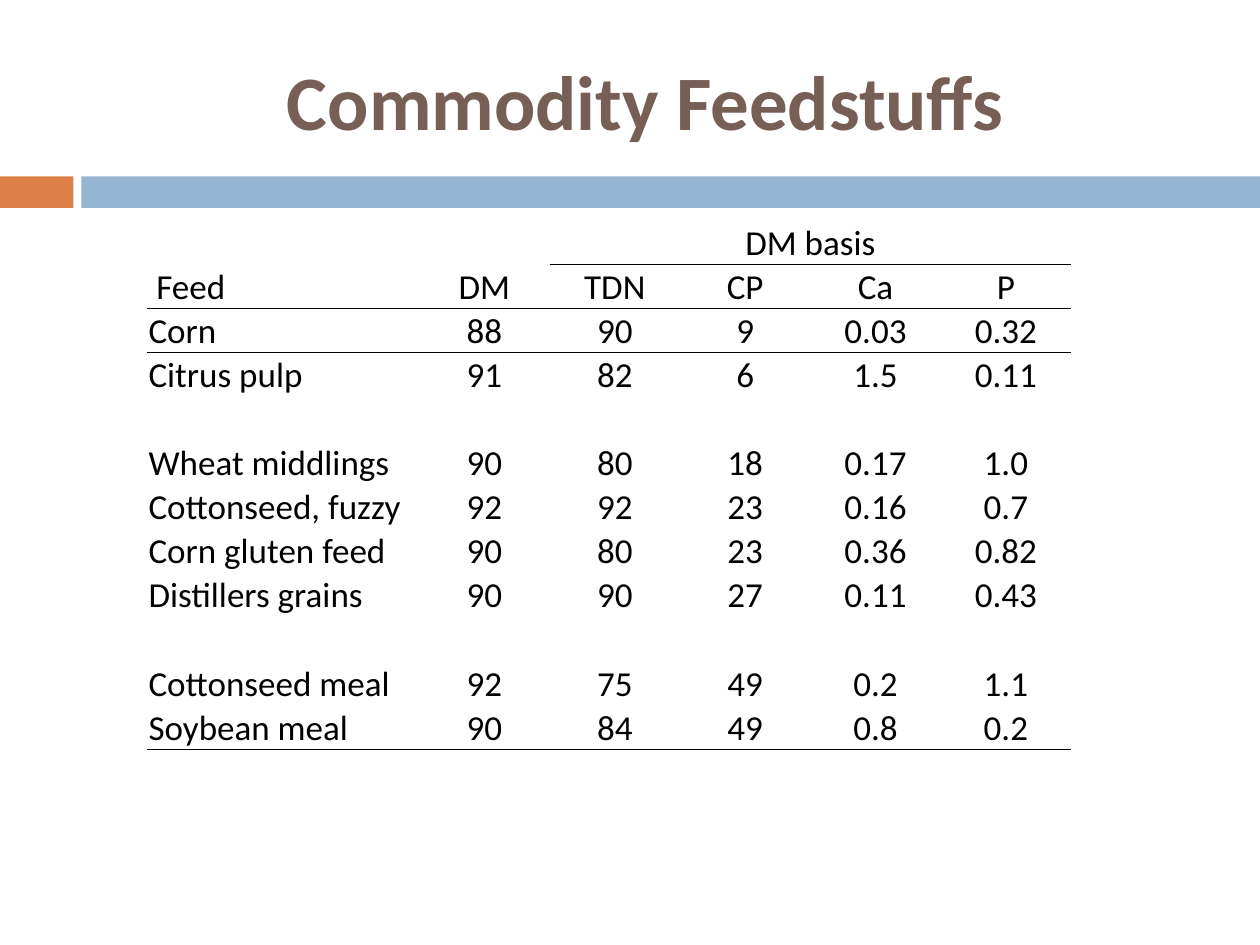
from lxml import etree
from pptx import Presentation
from pptx import util as u
from pptx.dml.color import RGBColor
from pptx.enum import shapes, text
from pptx.oxml import ns

COLORS = {"orange": "DD8047", "blue": "94B6D2", "brown": "775F55", "black": "000000"}
FEEDS = [
    ["", "", "DM basis", "", "", ""],
    ["Feed", "DM", "TDN", "CP", "Ca", "P"],
    ["Corn", "88", "90", "9", "0.03", "0.32"],
    ["Citrus pulp", "91", "82", "6", "1.5", "0.11"],
    [""] * 6,
    ["Wheat middlings", "90", "80", "18", "0.17", "1.0"],
    ["Cottonseed, fuzzy", "92", "92", "23", "0.16", "0.7"],
    ["Corn gluten feed", "90", "80", "23", "0.36", "0.82"],
    ["Distillers grains", "90", "90", "27", "0.11", "0.43"],
    [""] * 6,
    ["Cottonseed meal", "92", "75", "49", "0.2", "1.1"],
    ["Soybean meal", "90", "84", "49", "0.8", "0.2"],
]
ROW_HEIGHT = 25.2
COLUMN_WIDTHS = [155.4] + [74.5] * 5
RULES_BELOW = {0: 2, 1: 0, len(FEEDS) - 1: 0}
NO_GRID_STYLE = "{2D5ABB26-0587-4C30-8999-92F81FD0307C}"


def write(para, words, align, color, **font):
    para.alignment = align
    span = para.add_run()
    span.text = words
    span.font.color.rgb = RGBColor.from_string(COLORS[color])
    for name, value in {"name": "Calibri", **font}.items():
        setattr(span.font, name, value)


def add_border(cell, side):
    props = cell._tc.get_or_add_tcPr()
    line = etree.Element(ns.qn(f"a:{side}"), w=str(u.Pt(0.5)))
    fill = etree.SubElement(line, ns.qn("a:solidFill"))
    etree.SubElement(fill, ns.qn("a:srgbClr"), val=COLORS["black"])
    props.insert(0, line)


deck = Presentation()
deck.slide_width, deck.slide_height = u.Pt(720), u.Pt(540)
page = deck.slides.add_slide(deck.slide_layouts[6])

for left, width, color in [(0, 42, "orange"), (46.5, 673.5, "blue")]:
    bar = page.shapes.add_shape(
        shapes.MSO_SHAPE.RECTANGLE, u.Pt(left), u.Pt(100.8), u.Pt(width), u.Pt(18)
    )
    bar.shadow.inherit = False
    bar.fill.solid()
    bar.fill.fore_color.rgb = RGBColor.from_string(COLORS[color])
    bar.line.fill.background()

title = page.shapes.add_textbox(u.Pt(48), u.Pt(18), u.Pt(642), u.Pt(78)).text_frame
title.word_wrap = True
title.vertical_anchor = text.MSO_ANCHOR.MIDDLE
write(title.paragraphs[0], "Commodity Feedstuffs", text.PP_ALIGN.CENTER, "brown",
      size=u.Pt(44), bold=True)

frame = page.shapes.add_table(
    len(FEEDS), len(COLUMN_WIDTHS), u.Pt(84.2), u.Pt(126),
    u.Pt(sum(COLUMN_WIDTHS)), u.Pt(ROW_HEIGHT * len(FEEDS)),
)
table = frame.table
table.first_row = table.horz_banding = False
table._tbl.tblPr.find(ns.qn("a:tableStyleId")).text = NO_GRID_STYLE
for column, width in zip(table.columns, COLUMN_WIDTHS):
    column.width = u.Pt(width)
for row in table.rows:
    row.height = u.Pt(ROW_HEIGHT)
table.cell(0, 2).merge(table.cell(0, 5))

CELL_FORMAT = {
    "margin_left": u.Pt(0.7),
    "margin_right": u.Pt(0.7),
    "margin_top": u.Pt(0.7),
    "margin_bottom": u.Pt(0),
    "vertical_anchor": text.MSO_ANCHOR.BOTTOM,
}
for row_index, values in enumerate(FEEDS):
    for column_index, value in enumerate(values):
        cell = table.cell(row_index, column_index)
        for name, setting in CELL_FORMAT.items():
            setattr(cell, name, setting)
        cell.fill.background()
        if value:
            align = text.PP_ALIGN.CENTER if column_index else text.PP_ALIGN.LEFT
            write(cell.text_frame.paragraphs[0], value, align, "black", size=u.Pt(20))
        for side, ruled_row in [("lnB", row_index), ("lnT", row_index - 1)]:
            if column_index >= RULES_BELOW.get(ruled_row, len(values)):
                add_border(cell, side)
table.cell(1, 0).margin_left = u.Pt(5.2)

deck.save("out.pptx")
